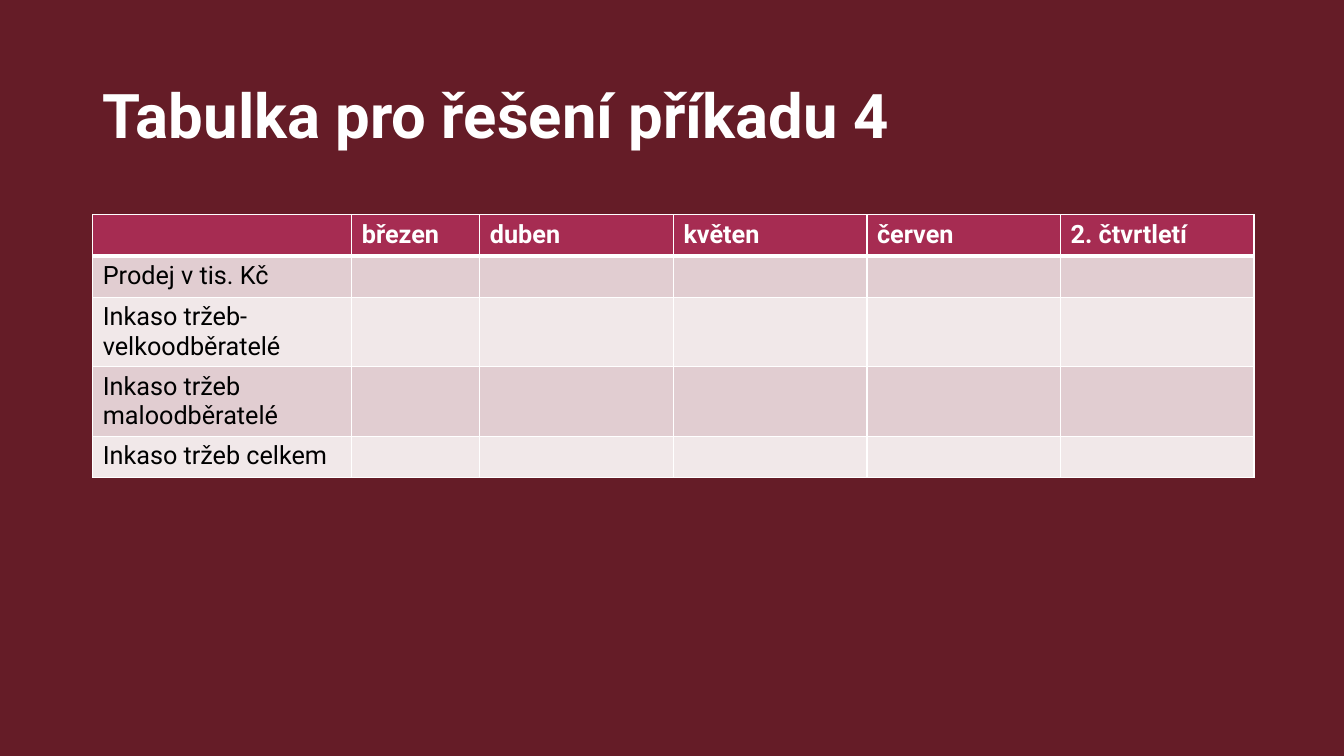
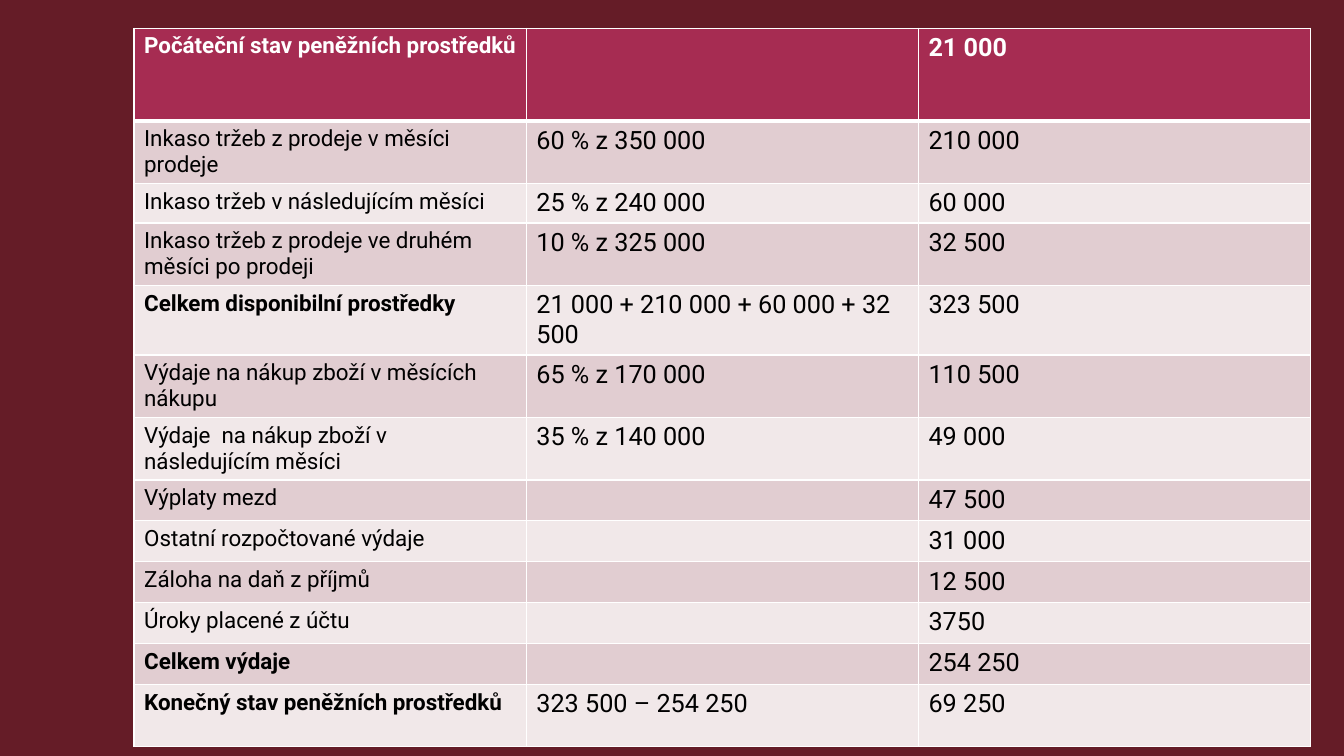
from dataclasses import dataclass

from lxml import etree
from pptx import Presentation
from pptx import util as u
from pptx.dml import color, fill
from pptx.enum import text
from pptx.oxml import ns
from pptx.slide import Slide
from pptx.table import _Cell
from pptx.text import text as txt

# Shared look
FONT = "Roboto"
WINE, RASPBERRY, ROSE, BLUSH = "651C27", "A62C52", "E1CDD1", "F1E8E9"
WHITE, BLACK = "FFFFFF", "000000"
THIN, THICK = 1, 3
ONE_LINE, TWO_LINES = 0.41, 0.69


@dataclass(frozen=True)
class Row:
    cells: tuple[str, ...]
    height: float
    bold_label: bool = False


@dataclass(frozen=True)
class Grid:
    left: float
    top: float
    columns: tuple[float, ...]
    label_size: int
    rows: tuple[Row, ...]


COLLECTIONS = Grid(0.92, 2.13, (2.57, 1.27) + (1.92,) * 4, 18, (
    Row(("", "březen", "duben", "květen", "červen", "2. čtvrtletí"), ONE_LINE),
    Row(("Prodej v tis. Kč",), ONE_LINE),
    Row(("Inkaso tržeb- velkoodběratelé",), TWO_LINES),
    Row(("Inkaso tržeb maloodběratelé",), TWO_LINES),
    Row(("Inkaso tržeb celkem",), ONE_LINE),
))

CASH_BUDGET = Grid(1.33, 0.28, (3.89,) * 3, 16, (
    Row(("Počáteční stav peněžních prostředků", "", "21 000"), 0.92, True),
    Row(("Inkaso tržeb z prodeje v měsíci prodeje", "60 % z 350 000", "210 000"), 0.62),
    Row(("Inkaso tržeb v následujícím měsíci", "25 % z 240 000", "60 000"), 0.39),
    Row(("Inkaso tržeb z prodeje ve druhém měsíci po prodeji", "10 % z 325 000", "32 500"), 0.62),
    Row(("Celkem disponibilní prostředky", "21 000 + 210 000 + 60 000 + 32 500", "323 500"),
        0.69, True),
    Row(("Výdaje na nákup zboží v měsících nákupu", "65 % z 170 000", "110 500"), 0.62),
    Row(("Výdaje  na nákup zboží v následujícím měsíci", "35 % z 140 000", "49 000"), 0.62),
    Row(("Výplaty mezd", "", "47 500"), 0.39),
    Row(("Ostatní rozpočtované výdaje", "", "31 000"), 0.39),
    Row(("Záloha na daň z příjmů", "", "12 500"), 0.39),
    Row(("Úroky placené z účtu", "", "3750"), 0.39),
    Row(("Celkem výdaje", "", "254 250"), 0.39, True),
    Row(("Konečný stav peněžních prostředků", "323 500 – 254 250", "69 250"), 0.62, True),
))


def rgb(hex_color: str) -> color.RGBColor:
    return color.RGBColor.from_string(hex_color)


def paint(area: fill.FillFormat, hex_color: str) -> None:
    area.solid()
    area.fore_color.rgb = rgb(hex_color)


def write(frame: txt.TextFrame, words: str, size: int, hex_color: str, bold: bool) -> None:
    frame.text = words
    for run in frame.paragraphs[0].runs:
        run.font.name = FONT
        run.font.size = u.Pt(size)
        run.font.bold = bold
        run.font.color.rgb = rgb(hex_color)


def add_borders(cell: _Cell, top: int, bottom: int) -> None:
    """Draw white edges; call before filling, as lines come first in the cell."""
    properties = cell._tc.get_or_add_tcPr()
    for edge, width in (("L", THIN), ("R", THIN), ("T", top), ("B", bottom)):
        line = etree.SubElement(properties, ns.qn(f"a:ln{edge}"), w=str(u.Pt(width)))
        solid = etree.SubElement(line, ns.qn("a:solidFill"))
        etree.SubElement(solid, ns.qn("a:srgbClr"), val=WHITE)


def add_grid(slide: Slide, grid: Grid) -> None:
    table = slide.shapes.add_table(
        len(grid.rows), len(grid.columns), u.Inches(grid.left), u.Inches(grid.top),
        u.Inches(sum(grid.columns)), u.Inches(sum(row.height for row in grid.rows))).table
    for column, width in zip(table.columns, grid.columns):
        column.width = u.Inches(width)
    for r, row in enumerate(grid.rows):
        table.rows[r].height = u.Inches(row.height)
        header = r == 0
        band = RASPBERRY if header else (BLUSH, ROSE)[r % 2]
        for c in range(len(grid.columns)):
            cell = table.cell(r, c)
            add_borders(cell, THICK if r == 1 else THIN, THICK if header else THIN)
            paint(cell.fill, band)
            if c < len(row.cells) and row.cells[c]:
                write(cell.text_frame, row.cells[c], grid.label_size if c == 0 else 18,
                      WHITE if header else BLACK, header or (c == 0 and row.bold_label))


def add_title(slide: Slide, words: str) -> None:
    title = slide.shapes.title
    title.left, title.top = u.Inches(0.92), u.Inches(0.4)
    title.width, title.height = u.Inches(11.5), u.Inches(1.45)
    title.text_frame.vertical_anchor = text.MSO_ANCHOR.MIDDLE
    write(title.text_frame, words, 44, WHITE, True)
    title.text_frame.paragraphs[0].alignment = text.PP_ALIGN.LEFT


def main() -> None:
    prs = Presentation()
    prs.slide_width, prs.slide_height = u.Inches(13.33), u.Inches(7.5)
    paint(prs.slide_master.background.fill, WINE)
    title_only, blank = prs.slide_layouts[5], prs.slide_layouts[6]

    # Empty table for the exercise
    exercise = prs.slides.add_slide(title_only)
    add_title(exercise, "Tabulka pro řešení příkadu 4")
    add_grid(exercise, COLLECTIONS)

    # Cash budget
    add_grid(prs.slides.add_slide(blank), CASH_BUDGET)

    prs.save("out.pptx")


if __name__ == "__main__":
    main()
